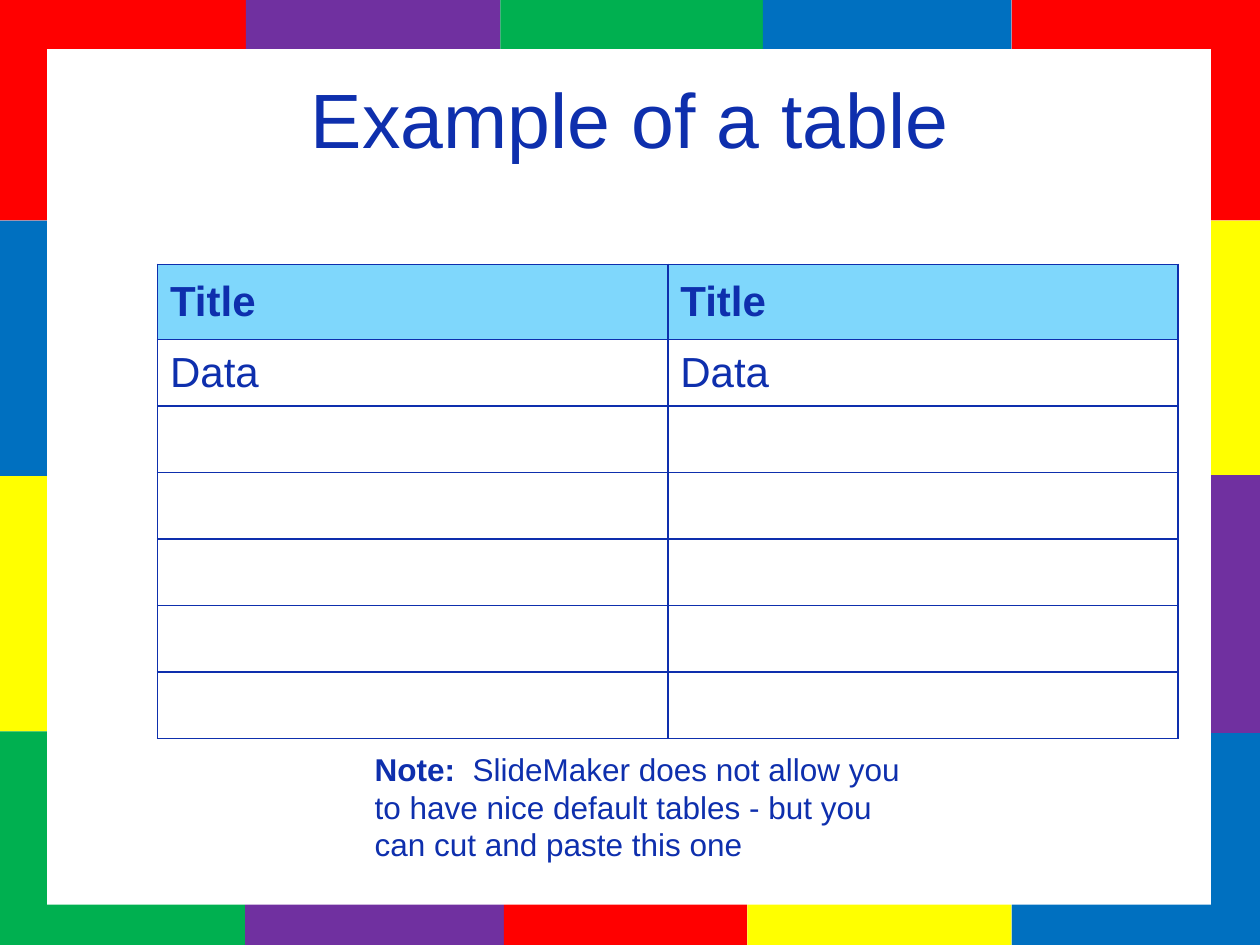
"""Build a slide with a sample table inside a colourful brick border."""
from itertools import pairwise

from lxml import etree
from pptx import Presentation
from pptx.dml.color import RGBColor
from pptx.enum.shapes import MSO_SHAPE
from pptx.enum.text import MSO_ANCHOR, PP_ALIGN
from pptx.oxml.ns import qn
from pptx.util import Pt

RECT = MSO_SHAPE.RECTANGLE
MIDDLE, TOP = MSO_ANCHOR.MIDDLE, MSO_ANCHOR.TOP
LEFT, CENTER = PP_ALIGN.LEFT, PP_ALIGN.CENTER

W, H = 720, 540
BRICK_W, BRICK_H = 142, 126
RED, BLUE, GREEN = "FF0000", "0070C0", "00B050"
YELLOW, PURPLE, WHITE = "FFFF00", "7030A0", "FFFFFF"
INK, HEADER = "0E2FAD", "7FD7FC"

COLUMNS = [
    (0, [0, 126, 272, 418, H], [RED, BLUE, YELLOW, GREEN]),
    (W - BRICK_W, [0, 126, 271.5, 419, H], [RED, YELLOW, PURPLE, BLUE]),
]
ROWS = [
    (0, [140.5, 286, 436, 578], [PURPLE, GREEN, BLUE]),
    (H - BRICK_H, [140, 288, 427, 578], [PURPLE, RED, YELLOW]),
]
PANEL = (27, 28, 665, 489)

TITLE = [("Example of a table", False)]
NOTE = [
    ("Note:  ", True),
    ("SlideMaker does not allow you to have nice default tables"
     " - but you can cut and paste this one", False),
]
TABLE = [["Title", "Title"], ["Data", "Data"]] + [["", ""]] * 5
TABLE_X, TABLE_Y, COL_W = 90, 151, 291.6
HEAD_H, ROW_H = 43, 38


def rgb(color):
    return RGBColor.from_string(color)


def add_brick(s, x, y, w, h, color):
    sp = s.shapes.add_shape(RECT, Pt(x), Pt(y), Pt(w), Pt(h))
    sp.shadow.inherit = False
    sp.fill.solid()
    sp.fill.fore_color.rgb = rgb(color)
    sp.line.fill.background()


def write(tf, runs, size=24, align=LEFT, anchor=MIDDLE):
    tf.word_wrap = True
    tf.vertical_anchor = anchor
    p = tf.paragraphs[0]
    p.alignment = align
    for text, bold in runs:
        r = p.add_run()
        r.text = text
        r.font.name = "Arial"
        r.font.size = Pt(size)
        r.font.bold = bold
        r.font.color.rgb = rgb(INK)


def add_text(s, x, y, w, h, runs, **fmt):
    sp = s.shapes.add_textbox(Pt(x), Pt(y), Pt(w), Pt(h))
    write(sp.text_frame, runs, **fmt)


def set_borders(cell, color):
    props = cell._tc.get_or_add_tcPr()
    for i, side in enumerate(("a:lnL", "a:lnR", "a:lnT", "a:lnB")):
        ln = etree.Element(qn(side), w=str(Pt(1)))
        fill = etree.SubElement(ln, qn("a:solidFill"))
        etree.SubElement(fill, qn("a:srgbClr"), val=color)
        props.insert(i, ln)


def add_grid(s):
    heights = [HEAD_H] + [ROW_H] * (len(TABLE) - 1)
    n_cols = len(TABLE[0])
    frame = s.shapes.add_table(len(TABLE), n_cols, Pt(TABLE_X), Pt(TABLE_Y),
                               Pt(COL_W * n_cols), Pt(sum(heights)))
    table = frame.table
    for col in table.columns:
        col.width = Pt(COL_W)
    for i, (values, height) in enumerate(zip(TABLE, heights)):
        table.rows[i].height = Pt(height)
        for j, value in enumerate(values):
            cell = table.cell(i, j)
            cell.vertical_anchor = MIDDLE
            cell.fill.solid()
            cell.fill.fore_color.rgb = rgb(WHITE if i else HEADER)
            set_borders(cell, INK)
            if value:
                write(cell.text_frame, [(value, i == 0)])


def main():
    prs = Presentation()
    prs.slide_width, prs.slide_height = Pt(W), Pt(H)
    s = prs.slides.add_slide(prs.slide_layouts[6])
    for x, edges, colors in COLUMNS:
        for (start, end), color in zip(pairwise(edges), colors):
            add_brick(s, x, start, BRICK_W, end - start, color)
    for y, edges, colors in ROWS:
        for (start, end), color in zip(pairwise(edges), colors):
            add_brick(s, start, y, end - start, BRICK_H, color)
    add_brick(s, *PANEL, WHITE)
    add_text(s, 36, 22, 648, 90, TITLE, size=44, align=CENTER)
    add_grid(s)
    add_text(s, 207, 425, 323, 72, NOTE, size=18, anchor=TOP)
    prs.save("out.pptx")


if __name__ == "__main__":
    main()
